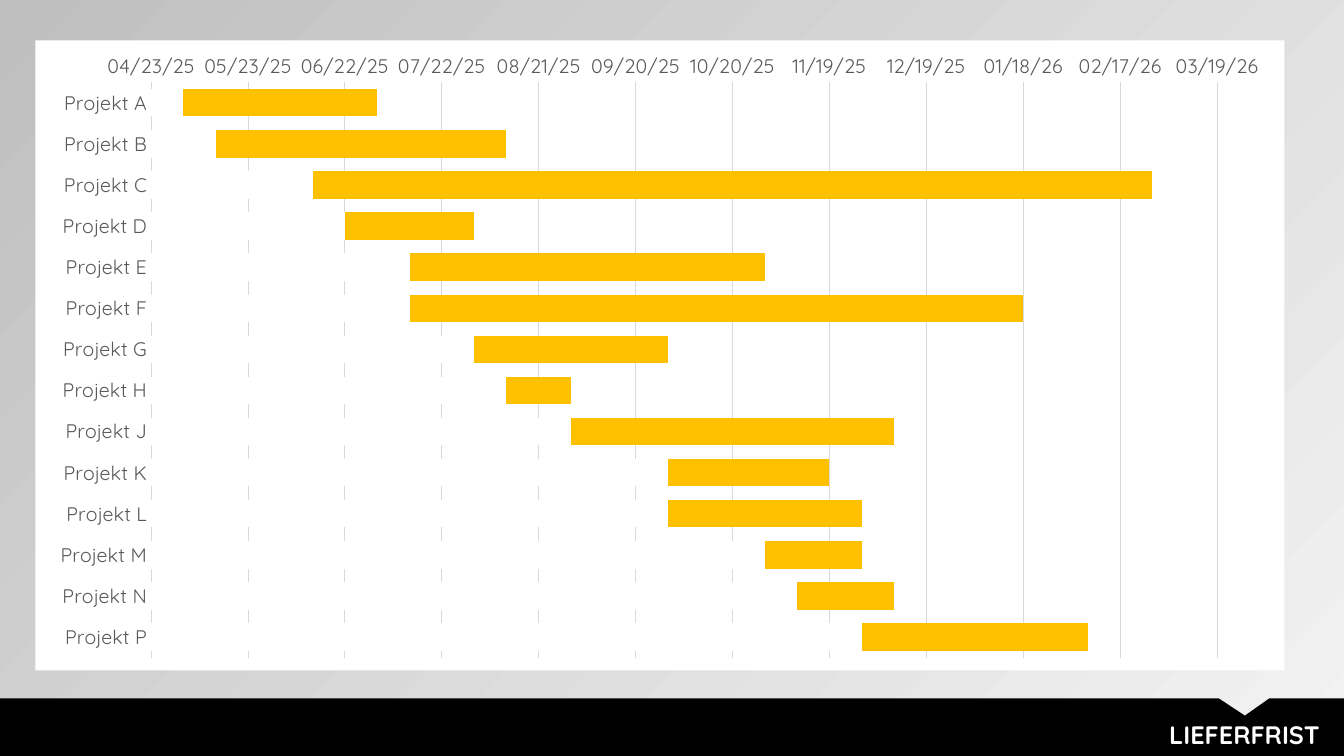
import pptx
import pptx.chart.data
import pptx.dml.color
import pptx.enum.chart
import pptx.enum.text
import pptx.util
from lxml import etree
from pptx.oxml.ns import qn

FONT = "Quicksand"
CELL = pptx.util.Inches(1 / 12)
COLUMNS, ROWS = 160, 90

# project: (start, end) as spreadsheet day numbers, to the nearest ten days
SCHEDULE = {
    "Projekt A": (45780, 45840),
    "Projekt B": (45790, 45880),
    "Projekt C": (45820, 46080),
    "Projekt D": (45830, 45870),
    "Projekt E": (45850, 45960),
    "Projekt F": (45850, 46040),
    "Projekt G": (45870, 45930),
    "Projekt H": (45880, 45900),
    "Projekt J": (45900, 46000),
    "Projekt K": (45930, 45980),
    "Projekt L": (45930, 45990),
    "Projekt M": (45960, 45990),
    "Projekt N": (45970, 46000),
    "Projekt P": (45990, 46060),
}
FIRST_DAY, LAST_DAY, DAYS_PER_TICK = 45770, 46100, 30


def color(hex_string):
    return pptx.dml.color.RGBColor.from_string(hex_string)


def cells(*counts):
    """Turn columns or rows of the grid into lengths."""
    return [round(count * CELL) for count in counts]


def paint(fill, hex_string):
    fill.solid()
    fill.fore_color.rgb = color(hex_string)


def rule(line, hex_string):
    line.color.rgb = color(hex_string)
    line.width = pptx.util.Pt(0.75)


class Deck:
    def __init__(self, font):
        self.font = font
        self.presentation = pptx.Presentation()
        self.presentation.slide_width, self.presentation.slide_height = cells(COLUMNS, ROWS)
        self.slide = self.presentation.slides.add_slide(self.presentation.slide_layouts[6])

    def style(self, font, size, hex_string, bold=False):
        font.name, font.size, font.bold = self.font, pptx.util.Pt(size), bold
        font.color.rgb = color(hex_string)

    def background(self, from_color, to_color, angle):
        fill = self.slide.background.fill
        fill.gradient()
        fill.gradient_angle = angle
        for stop, position, hex_string in zip(fill.gradient_stops, (0, 1), (from_color, to_color)):
            stop.position = position
            stop.color.rgb = color(hex_string)

    def outline(self, corners, hex_string):
        points = [tuple(cells(*corner)) for corner in corners]
        builder = self.slide.shapes.build_freeform(*points[0])
        builder.add_line_segments(points[1:], close=True)
        shape = builder.convert_to_shape()
        shape.shadow.inherit = False
        paint(shape.fill, hex_string)
        shape.line.fill.background()

    def label(self, words, box, size, hex_string):
        frame = self.slide.shapes.add_textbox(*cells(*box)).text_frame
        frame.word_wrap = True
        paragraph = frame.paragraphs[0]
        paragraph.text = words
        paragraph.alignment = pptx.enum.text.PP_ALIGN.RIGHT
        self.style(paragraph.font, size, hex_string, bold=True)

    def gantt(self, schedule, box, plot_box, bar_color, ground_color):
        """Draw bars up to each end date, then cover them up to the start date."""
        starts, ends = zip(*schedule.values())
        table = pptx.chart.data.CategoryChartData()
        table.categories = list(schedule)
        table.add_series("Series 1", ends)
        table.add_series("Series 2", starts)
        chart = self.slide.shapes.add_chart(
            pptx.enum.chart.XL_CHART_TYPE.BAR_CLUSTERED, *cells(*box), table).chart
        chart.has_legend = chart.has_title = False
        self.style(chart.font, 14, "000000")

        plot = chart.plots[0]
        plot.gap_width, plot.overlap, plot.vary_by_categories = 50, 100, False
        for series, hex_string in zip(plot.series, (bar_color, ground_color)):
            paint(series.format.fill, hex_string)
            series.invert_if_negative = False

        projects, days = chart.category_axis, chart.value_axis
        for axis in (projects, days):
            axis.major_tick_mark = axis.minor_tick_mark = pptx.enum.chart.XL_TICK_MARK.NONE
            self.style(axis.tick_labels.font, 14, "595959")
        projects.reverse_order = True
        projects.has_major_gridlines = False
        rule(projects.format.line, "D9D9D9")
        days.minimum_scale, days.maximum_scale = FIRST_DAY, LAST_DAY
        days.major_unit = DAYS_PER_TICK
        days.tick_labels.number_format = "mm/dd/yy;@"
        days.tick_labels.number_format_is_linked = False
        days.format.line.fill.background()
        rule(days.major_gridlines.format.line, "D9D9D9")
        self.chart_area(chart, ground_color)
        self.plot_area(chart, box, plot_box)

    def chart_area(self, chart, hex_string):
        area = etree.Element(qn("c:spPr"))
        fill = etree.SubElement(area, qn("a:solidFill"))
        etree.SubElement(fill, qn("a:srgbClr"), val=hex_string)
        etree.SubElement(etree.SubElement(area, qn("a:ln")), qn("a:noFill"))
        chart.element.find(qn("c:chart")).addnext(area)

    def plot_area(self, chart, box, plot_box):
        """Place the inner plot; plot_box is in cells from the chart's corner."""
        area = chart.element.find(".//" + qn("c:plotArea"))
        for automatic in area.findall(qn("c:layout")):
            area.remove(automatic)
        layout = etree.Element(qn("c:layout"))
        manual = etree.SubElement(layout, qn("c:manualLayout"))
        width, height = box[2:]
        shares = [count / size for count, size in zip(plot_box, (width, height) * 2)]
        settings = {"layoutTarget": "inner", "xMode": "edge", "yMode": "edge",
                    **dict(zip("xywh", shares))}
        for tag, value in settings.items():
            etree.SubElement(manual, qn("c:" + tag), val=str(value))
        area.insert(0, layout)


def main():
    deck = Deck(FONT)
    deck.background("F2F2F2", "BFBFBF", angle=135)
    footer_top = 83.15
    deck.outline([(0, footer_top), (145.1, footer_top), (148.2, 85.2), (151.1, footer_top),
                  (COLUMNS, footer_top), (COLUMNS, ROWS), (0, ROWS)], "000000")
    deck.label("LIEFERFRIST", (49.7, 85, 108.6, 4.8), 18, "FFFFFF")
    deck.gantt(SCHEDULE, box=(4.2, 4.8, 148.7, 75), plot_box=(13.8, 5, 126.9, 68.5),
               bar_color="FFC000", ground_color="FFFFFF")
    deck.presentation.save("out.pptx")


if __name__ == "__main__":
    main()
